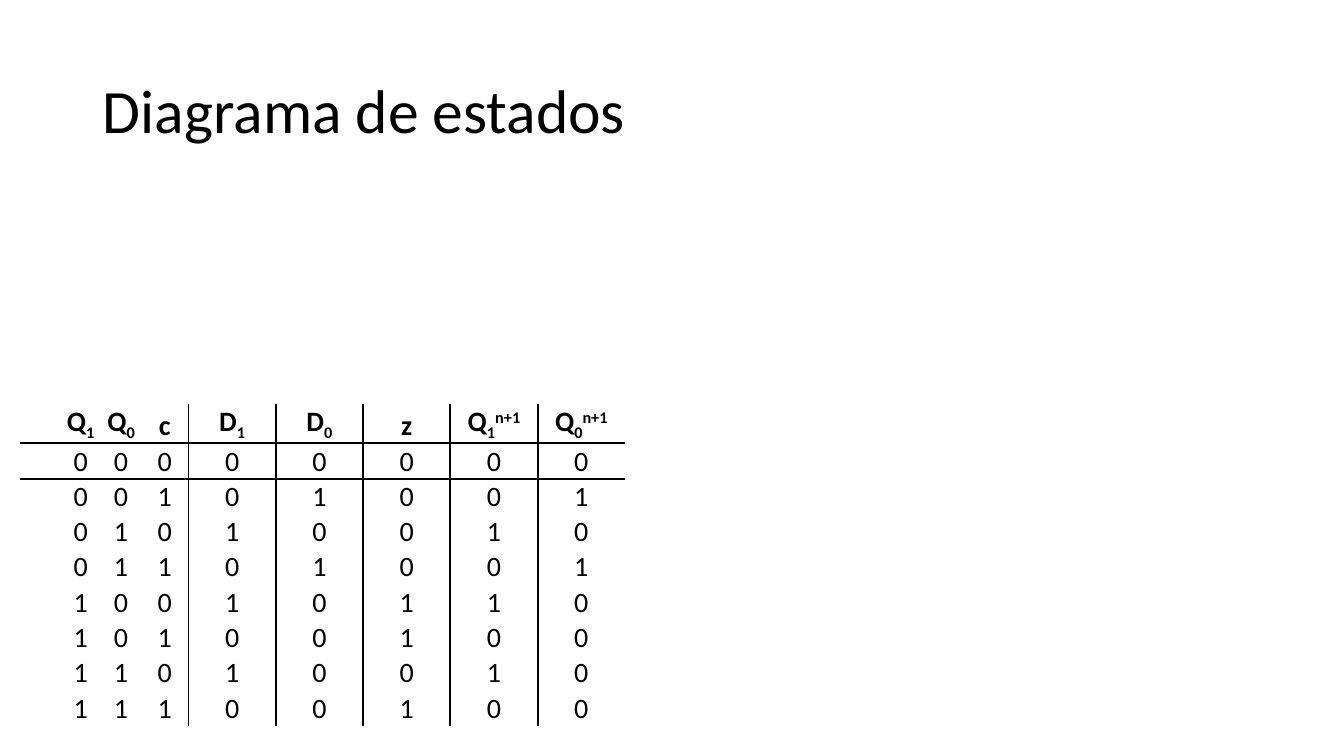
from typing import NamedTuple

from lxml.etree import SubElement
from pptx import Presentation
from pptx.dml.color import RGBColor
from pptx.enum.text import MSO_ANCHOR, PP_ALIGN
from pptx.oxml.ns import qn
from pptx.util import Inches, Pt

FONT = "Calibri"
BLACK = "000000"
NO_STYLE = "{2D5ABB26-0587-4C30-8999-92F81FD0307C}"


class Label(NamedTuple):
    text: str
    sub: str = ""
    sup: str = ""


HEADS = [Label(""), Label("Q", "1"), Label("Q", "0"), Label("c"), Label("D", "1"),
         Label("D", "0"), Label("z"), Label("Q", "1", "n+1"), Label("Q", "0", "n+1")]

# Each row: Q1 Q0 c, D1 D0, z, next Q1 Q0
STATES = ["00000000", "00101001", "01010010", "01101001",
          "10010110", "10100100", "11010010", "11100100"]

NARROW = [0.4, 0.4, 0.4, 0.47]
WIDTH = 6
WIDE = (WIDTH - sum(NARROW)) / 5
WIDTHS = NARROW + [WIDE] * 5
RULED = {3, 5, 6}  # columns with a line on their right


def set_font(font, size: int, bold: bool, color: str) -> None:
    font.name = FONT
    font.size = Pt(size)
    font.bold = bold
    font.color.rgb = RGBColor.from_string(color)


def add_border(cell, side: str, color: str) -> None:
    line = SubElement(cell._tc.get_or_add_tcPr(), qn(f"a:ln{side}"), w=str(Pt(1.5)))
    fill = SubElement(line, qn("a:solidFill"))
    SubElement(fill, qn("a:srgbClr"), val=color)


def fill_cell(cell, label: Label, row: int, col: int) -> None:
    cell.margin_left = cell.margin_right = cell.margin_top = Inches(0.01)
    cell.margin_bottom = 0
    cell.vertical_anchor = MSO_ANCHOR.BOTTOM
    sides = {"L": col - 1 in RULED, "R": col in RULED, "T": row == 1, "B": row == 0}
    for side, shown in sides.items():
        if shown:
            add_border(cell, side, BLACK)
    cell.fill.background()

    para = cell.text_frame.paragraphs[0]
    para.alignment = PP_ALIGN.CENTER
    set_font(para.font, 20, row == 0, BLACK)
    for text, shift in zip(label, (0, -25000, 30000)):
        if text:
            run = para.add_run()
            run.text = text
            if shift:
                run._r.get_or_add_rPr().set("baseline", str(shift))


def add_title(slide, text: str) -> None:
    title = slide.shapes.title
    title.left, title.top = Inches(0.92), Inches(0.4)
    title.width, title.height = Inches(11.5), Inches(1.45)
    title.text_frame.text = text
    title.text_frame.vertical_anchor = MSO_ANCHOR.MIDDLE
    para = title.text_frame.paragraphs[0]
    para.alignment = PP_ALIGN.LEFT
    para.line_spacing = 0.9
    set_font(para.font, 44, False, BLACK)


def add_states(slide) -> None:
    rows = [HEADS] + [[Label("")] + [Label(bit) for bit in bits] for bits in STATES]
    frame = slide.shapes.add_table(len(rows), len(HEADS), Inches(0.2), Inches(4.01),
                                   Inches(WIDTH), Inches(3.09))
    table = frame.table
    table.first_row = table.horz_banding = False
    table._tbl.tblPr.find(qn("a:tableStyleId")).text = NO_STYLE
    for column, width in zip(table.columns, WIDTHS):
        column.width = Inches(width)
    for r, labels in enumerate(rows):
        table.rows[r].height = Inches(0.3 if r < 2 else 0.28)
        for c, label in enumerate(labels):
            fill_cell(table.cell(r, c), label, r, c)
    frame.height = Inches(3.09)


def main() -> None:
    deck = Presentation()
    deck.slide_width, deck.slide_height = Inches(13.33), Inches(7.5)
    slide = deck.slides.add_slide(deck.slide_layouts[5])
    # Title
    add_title(slide, "Diagrama de estados")
    # State table
    add_states(slide)
    deck.save("out.pptx")


if __name__ == "__main__":
    main()
